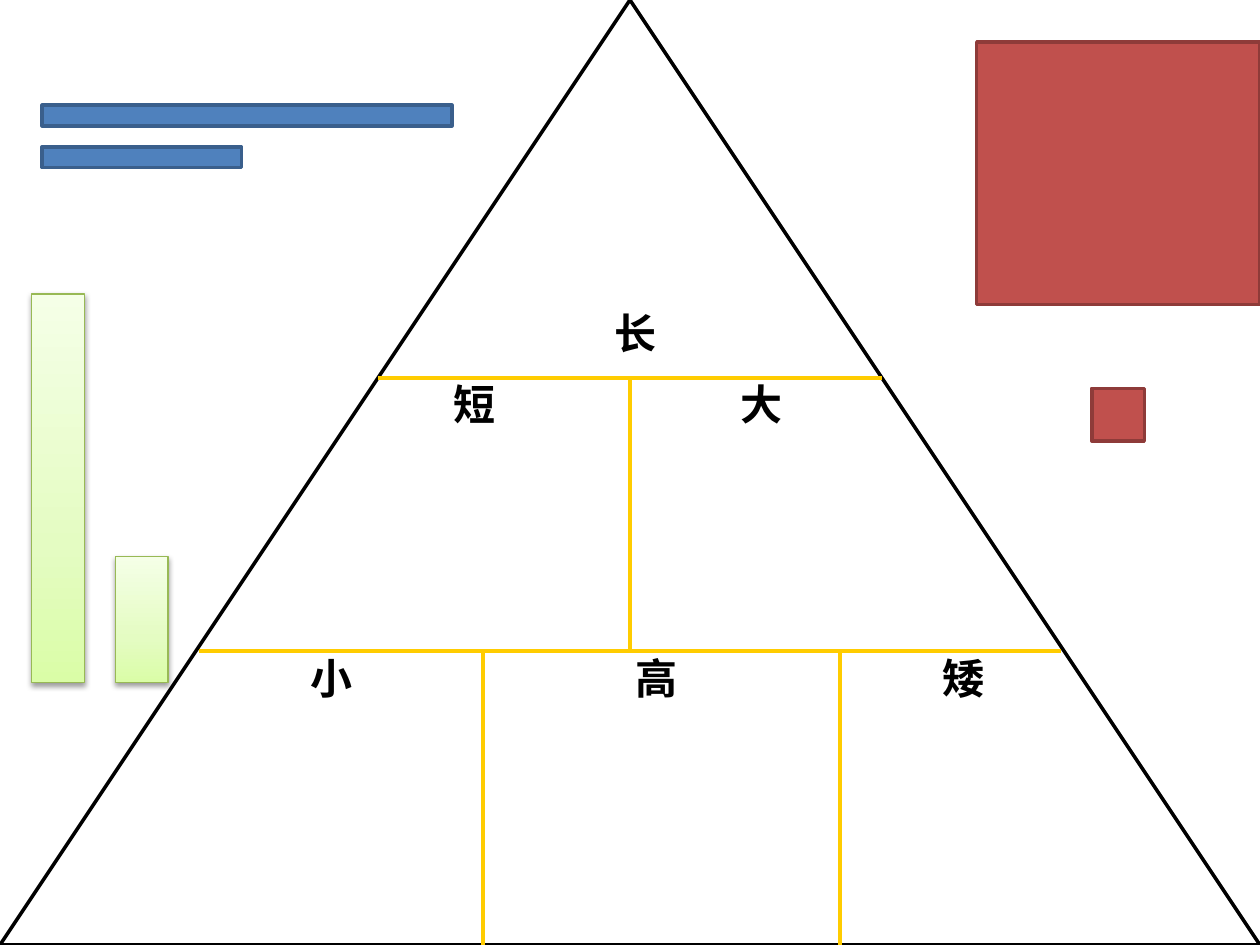
"""Build a triangle of opposite-word cells surrounded by bars and squares."""
from pptx import Presentation
from pptx.dml.color import RGBColor
from pptx.enum.shapes import MSO_CONNECTOR as Link, MSO_SHAPE as Form
from pptx.enum.text import MSO_AUTO_SIZE as Fit, PP_ALIGN as Align
from pptx.oxml import parse_xml
from pptx.oxml.ns import nsdecls, qn
from pptx.util import Cm, Pt

hex_color = RGBColor.from_string


def add_block(form, left, top, width, height, line, weight, fill=None):
    block = page.shapes.add_shape(form, Cm(left), Cm(top), Cm(width), Cm(height))
    block.shadow.inherit = False
    block.line.color.rgb = hex_color(line)
    block.line.width = Pt(weight)
    if fill:
        block.fill.solid()
        block.fill.fore_color.rgb = hex_color(fill)
    return block


def add_label(text, left, top, width, size=24, color="000000", font="Times New Roman"):
    box = page.shapes.add_textbox(Cm(left), Cm(top), Cm(width), Cm(0.97))
    frame = box.text_frame
    frame.word_wrap = True
    frame.auto_size = Fit.SHAPE_TO_FIT_TEXT
    para = frame.paragraphs[0]
    para.alignment = Align.CENTER
    para.line_spacing = 0.65
    para.space_before = Pt(size / 2)
    span = para.add_run()
    span.text = text
    span.font.name = font
    span.font.size = Pt(size)
    span.font.bold = True
    span.font.color.rgb = hex_color(color)


deck = Presentation()
deck.slide_width, deck.slide_height = Cm(25.4), Cm(19.05)
page = deck.slides.add_slide(deck.slide_layouts[6])

add_block(Form.ISOSCELES_TRIANGLE, 0, 0, 25.4, 19.05, "000000", 2, "FFFFFF")

upper, lower, base = 7.62, 13.12, 19.05
dividers = [
    (4.02, lower, 21.38, lower),
    (7.62, upper, 17.78, upper),
    (9.74, lower, 9.74, base),
    (16.93, lower, 16.93, base),
    (12.7, upper, 12.7, lower),
]
for ends in dividers:
    divider = page.shapes.add_connector(Link.STRAIGHT, *map(Cm, ends))
    divider.line.color.rgb = hex_color("FFCC00")
    divider.line.width = Pt(2.25)
    divider._element.spPr.append(parse_xml(f"<a:effectLst {nsdecls('a')}/>"))

labels = [
    ("小", 3.18, 13.34, 6.99),
    ("短", 6.5, 7.83, 6.14),
    ("高", 9.74, 13.34, 6.99),
    ("大", 12.28, 7.83, 6.14),
    ("矮", 15.93, 13.34, 6.99),
    ("长", 9.74, 6.4, 6.14),
]
for label in labels:
    add_label(*label)

for top, width in [(2.12, 8.26), (2.96, 4.02)]:
    add_block(Form.RECTANGLE, 0.85, top, width, 0.42, "3A5F8C", 2, "4F81BD")

for left, top, width, height in [(19.69, 0.85, 5.71, 5.29), (22.01, 7.83, 1.06, 1.06)]:
    add_block(Form.RECTANGLE, left, top, width, height, "8E3B39", 2, "C0504D")

stops = "".join(
    f'<a:gs pos="{place * 1000}"><a:srgbClr val="{color}"/></a:gs>'
    for place, color in [(0, "DAFDA7"), (35, "E4FCC2"), (100, "F5FFE7")]
)
gradient = (
    f'<a:gradFill {nsdecls("a")} rotWithShape="1"><a:gsLst>{stops}</a:gsLst>'
    '<a:lin ang="16200000" scaled="0"/></a:gradFill>'
)
shadow = (
    f'<a:outerShdw {nsdecls("a")} blurRad="40000" dist="20000" dir="5400000" rotWithShape="0">'
    '<a:srgbClr val="000000"><a:alpha val="38000"/></a:srgbClr></a:outerShdw>'
)
for left, top, height in [(0.64, 5.93, 7.83), (2.33, 11.22, 2.54)]:
    bar = add_block(Form.RECTANGLE, left, top, 1.06, height, "98B955", 0.75)
    properties = bar._element.spPr
    properties.find(qn("a:ln")).addprevious(parse_xml(gradient))
    properties.find(qn("a:effectLst")).append(parse_xml(shadow))

deck.save("out.pptx")
